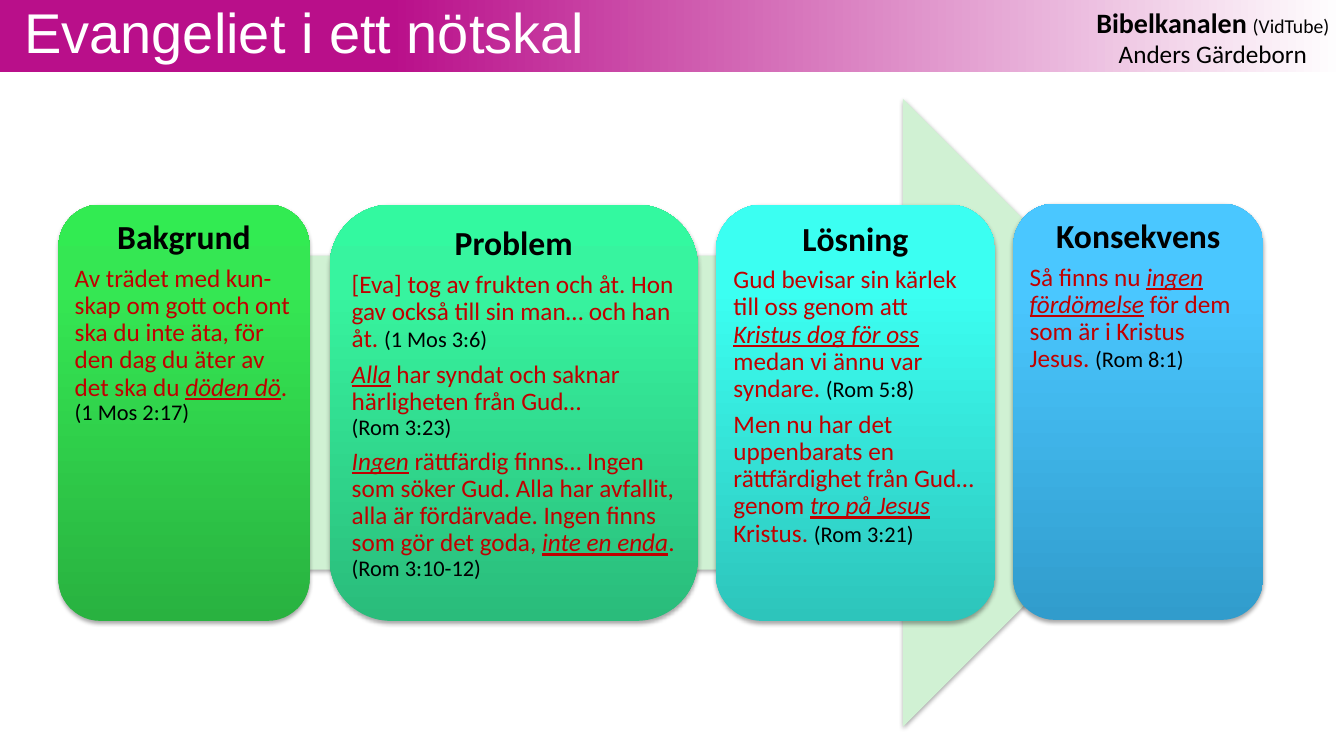
from dataclasses import dataclass, field

from lxml.etree import SubElement
from pptx import Presentation
from pptx.dml.color import RGBColor
from pptx.enum.shapes import MSO_SHAPE
from pptx.enum.text import MSO_ANCHOR, MSO_AUTO_SIZE, PP_ALIGN
from pptx.oxml.ns import qn
from pptx.util import Inches, Pt


@dataclass(frozen=True)
class TextStyle:
    size: int
    color: str
    font: str = "Calibri"
    bold: bool = False
    emphasis: bool = False


@dataclass(frozen=True)
class Theme:
    arrow: str = "D0F1D3"
    shadow: str = "000000"
    banner: tuple = ((0, "B90F8A"), (29, "B90F8A"), (100, "FFFFFF"))
    green: tuple = ((0, "29B240"), (80, "35E753"), (100, "32EB52"))
    mint: tuple = ((0, "2ABC7B"), (80, "37F49F"), (100, "33F9A0"))
    turquoise: tuple = ((0, "2DC5BB"), (80, "3BFFF2"), (100, "3DFFF2"))
    blue: tuple = ((0, "319CCC"), (80, "4AC7FF"), (100, "4CC7FF"))
    text: dict = field(default_factory=lambda: {
        "title": TextStyle(40, "FFFFFF", font="Arial"),
        "heading": TextStyle(24, "000000", bold=True),
        "verse": TextStyle(18, "C00000"),
        "key": TextStyle(18, "C00000", emphasis=True),
        "reference": TextStyle(16, "000000"),
        "channel": TextStyle(20, "000000", bold=True),
        "platform": TextStyle(14, "000000"),
        "speaker": TextStyle(18, "000000"),
    })


class SlideBuilder:
    def __init__(self, slide, theme):
        self.slide = slide
        self.theme = theme

    def format_run(self, run, style_name):
        style = self.theme.text[style_name]
        font = run.font
        font.name, font.size = style.font, Pt(style.size)
        font.color.rgb = RGBColor.from_string(style.color)
        font.bold = style.bold
        font.italic = font.underline = style.emphasis

    def add_spans(self, paragraph, spans):
        """Add (style name, text) spans; a newline becomes a line break."""
        for style_name, text in spans:
            for index, line in enumerate(text.split("\n")):
                if index:
                    paragraph.add_line_break()
                if line:
                    run = paragraph.add_run()
                    run.text = line
                    self.format_run(run, style_name)

    def set_insets(self, frame, left, top, right, bottom):
        frame.margin_left, frame.margin_right = Inches(left), Inches(right)
        frame.margin_top, frame.margin_bottom = Inches(top), Inches(bottom)

    def fill_gradient(self, shape, stops, angle):
        """Fill with (percent, colour) stops; angle is clockwise in degrees."""
        shape.fill.gradient()
        gradient = shape.element.spPr.find(qn("a:gradFill"))
        stop_list = gradient.find(qn("a:gsLst"))
        for default_stop in list(stop_list):
            stop_list.remove(default_stop)
        for percent, color in stops:
            stop = SubElement(stop_list, qn("a:gs"), pos=str(percent * 1000))
            SubElement(stop, qn("a:srgbClr"), val=color)
        gradient.find(qn("a:lin")).set("ang", str(angle * 60000))

    def add_shadow(self, shape):
        effects = shape.element.spPr.find(qn("a:effectLst"))
        shadow = SubElement(effects, qn("a:outerShdw"), blurRad=str(Pt(3.1)),
                            dist=str(Pt(1.8)), dir=str(90 * 60000), rotWithShape="0")
        color = SubElement(shadow, qn("a:srgbClr"), val=self.theme.shadow)
        SubElement(color, qn("a:alpha"), val="35000")

    def add_shape(self, preset, left, top, width, height):
        shape = self.slide.shapes.add_shape(
            preset, Inches(left), Inches(top), Inches(width), Inches(height))
        shape.line.fill.background()
        shape.shadow.inherit = False
        return shape

    def add_banner(self):
        banner = self.add_shape(MSO_SHAPE.RECTANGLE, 0, 0, 13.33, 0.71)
        self.fill_gradient(banner, self.theme.banner, 0)

    def add_credit(self, spans):
        credit = self.slide.shapes.add_textbox(
            Inches(10.75), Inches(0.05), Inches(2.56), Inches(0.64))
        frame = credit.text_frame
        frame.word_wrap = False
        frame.auto_size = MSO_AUTO_SIZE.SHAPE_TO_FIT_TEXT
        self.set_insets(frame, 0.1, 0, 0.1, 0)
        frame.paragraphs[0].alignment = PP_ALIGN.CENTER
        self.add_spans(frame.paragraphs[0], spans)

    def add_title(self, text):
        """Fill the title placeholder and bring it in front of the banner."""
        title = self.slide.shapes.title
        title.left, title.top = Inches(0), Inches(0)
        title.width, title.height = Inches(13.33), Inches(0.7)
        frame = title.text_frame
        frame.text = text
        frame.auto_size = MSO_AUTO_SIZE.NONE
        frame.vertical_anchor = MSO_ANCHOR.MIDDLE
        self.set_insets(frame, 0.24, 0.05, 0.1, 0.05)
        paragraph = frame.paragraphs[0]
        paragraph.alignment = PP_ALIGN.LEFT
        paragraph.line_spacing = 0.9
        self.format_run(paragraph.runs[0], "title")
        title.element.getparent().append(title.element)

    def add_arrow(self):
        arrow = self.add_shape(MSO_SHAPE.RIGHT_ARROW, 0.98, 0.98, 11.09, 6.23)
        arrow.fill.solid()
        arrow.fill.fore_color.rgb = RGBColor.from_string(self.theme.arrow)
        self.add_shadow(arrow)

    def add_card(self, left, top, width, stops, heading, verses):
        card = self.add_shape(MSO_SHAPE.ROUNDED_RECTANGLE, left, top, width, 4.13)
        self.fill_gradient(card, stops, 270)
        self.add_shadow(card)
        frame = card.text_frame
        frame.word_wrap = True
        frame.vertical_anchor = MSO_ANCHOR.TOP
        self.set_insets(frame, 0.04, 0.04, 0.04, 0.04)
        for index, spans in enumerate([[("heading", heading)], *verses]):
            paragraph = frame.add_paragraph() if index else frame.paragraphs[0]
            paragraph.alignment = PP_ALIGN.LEFT if index else PP_ALIGN.CENTER
            paragraph.line_spacing = 0.9
            paragraph.space_after = Pt(6)
            self.add_spans(paragraph, spans)


def main():
    deck = Presentation()
    deck.slide_width, deck.slide_height = Inches(13.33), Inches(7.5)
    theme = Theme()
    builder = SlideBuilder(deck.slides.add_slide(deck.slide_layouts[5]), theme)

    builder.add_banner()
    builder.add_credit([("channel", "Bibelkanalen"), ("speaker", " "),
                        ("platform", "(VidTube)\n"), ("speaker", "Anders Gärdeborn")])
    builder.add_title("Evangeliet i ett nötskal")
    builder.add_arrow()

    builder.add_card(0.58, 2.03, 2.49, theme.green, "Bakgrund", [
        [("verse", "Av trädet med kun-skap om gott och ont ska du inte äta, "
                   "för den dag du äter av det ska du "),
         ("key", "döden dö"), ("verse", ". \n"), ("reference", "(1 Mos 2:17)")],
    ])
    builder.add_card(3.27, 2.03, 3.65, theme.mint, "Problem", [
        [("verse", "[Eva] tog av frukten och åt. Hon gav också till sin man… och han åt. "),
         ("reference", "(1 Mos 3:6)")],
        [("key", "Alla"), ("verse", " har syndat och saknar härligheten från Gud… \n"),
         ("reference", "(Rom 3:23)")],
        [("key", "Ingen"),
         ("verse", " rättfärdig finns… Ingen som söker Gud. Alla har avfallit, "
                   "alla är fördärvade. Ingen finns som gör det goda, "),
         ("key", "inte en enda"), ("verse", ". "), ("reference", "(Rom 3:10-12)")],
    ])
    builder.add_card(7.1, 2.03, 2.77, theme.turquoise, "Lösning", [
        [("verse", "Gud bevisar sin kärlek till oss genom att "),
         ("key", "Kristus dog för oss"), ("verse", " medan vi ännu var syndare. "),
         ("reference", "(Rom 5:8)")],
        [("verse", "Men nu har det uppenbarats en rättfärdighet från Gud… genom "),
         ("key", "tro på Jesus"), ("verse", " Kristus. "), ("reference", "(Rom 3:21)")],
    ])
    builder.add_card(10.05, 2.02, 2.48, theme.blue, "Konsekvens", [
        [("verse", "Så finns nu "), ("key", "ingen fördömelse"),
         ("verse", " för dem som är i Kristus Jesus. "), ("reference", "(Rom 8:1)")],
    ])
    deck.save("out.pptx")


if __name__ == "__main__":
    main()
